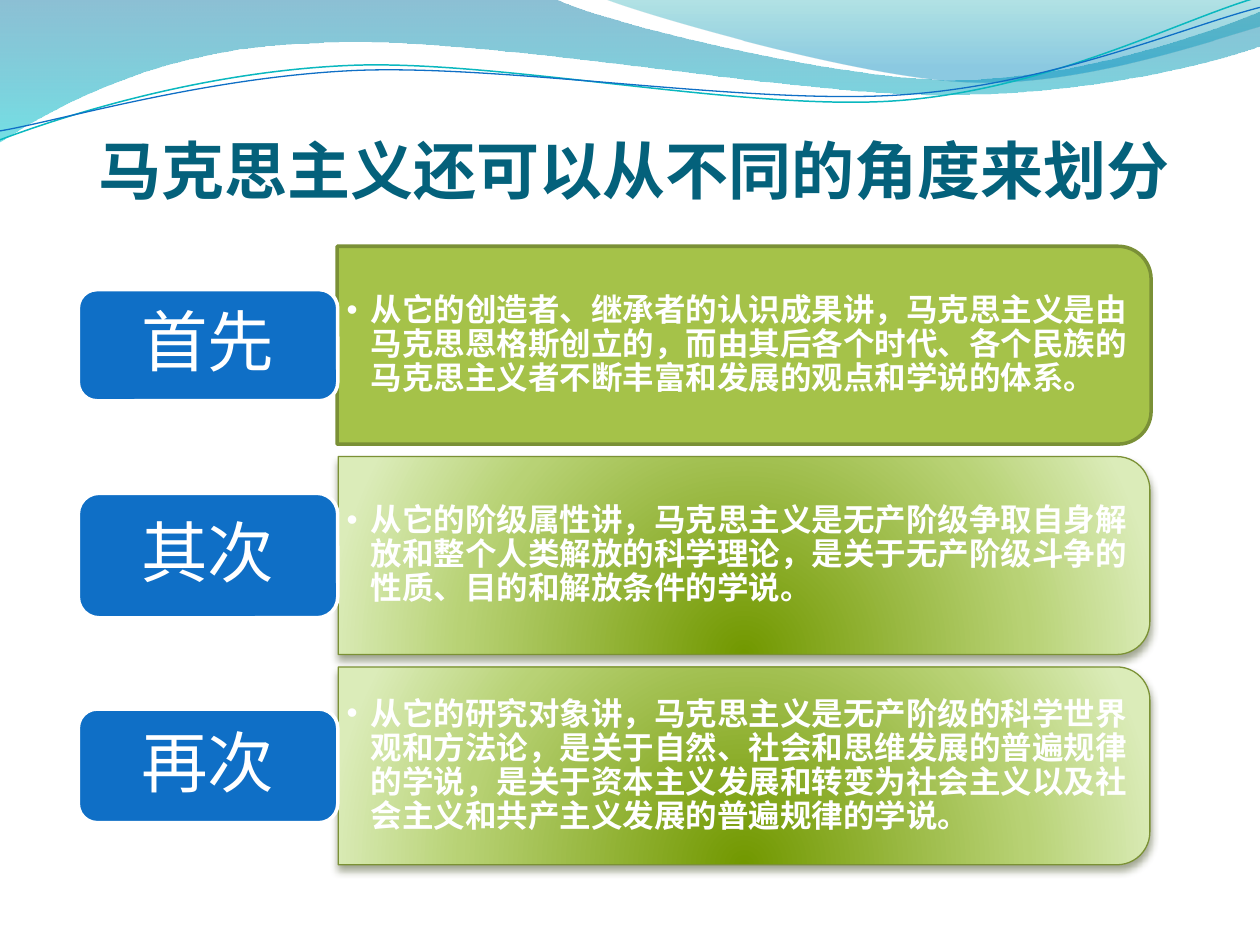
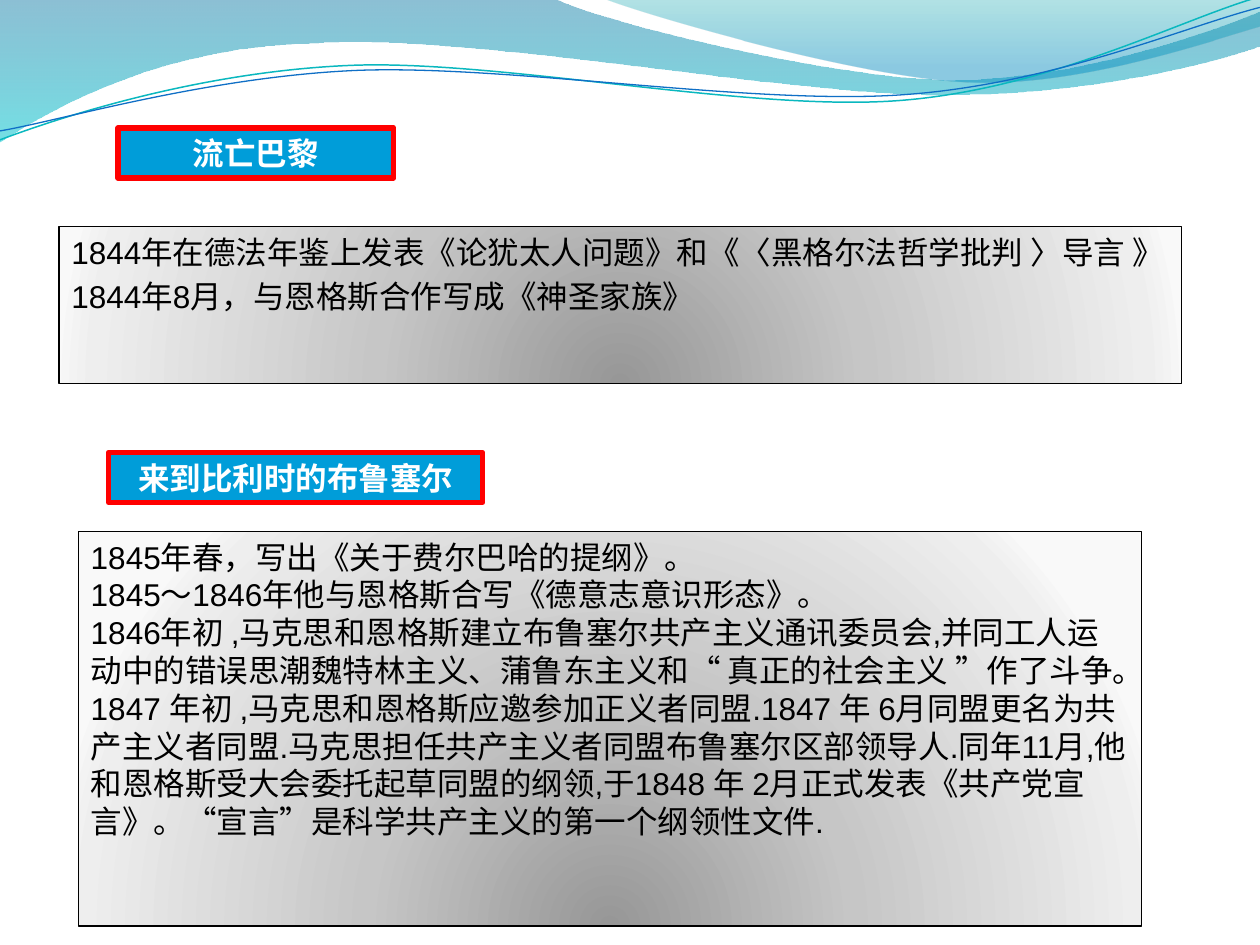
from lxml import etree
from pptx import Presentation
from pptx.dml.color import RGBColor
from pptx.enum.shapes import MSO_SHAPE as Preset
from pptx.enum.text import MSO_ANCHOR as Anchor, PP_ALIGN as Align
from pptx.oxml import parse_xml
from pptx.oxml.ns import nsdecls, qn
from pptx.util import Cm, Pt

TEAL, BLUE, SKY = "04617B", "0F6FC6", "009DD9"
WHITE, BLACK, RED = "FFFFFF", "000000", "FF0000"
# Gradients: angle (None for a circle rising from below), then (position, colour, opacity)
GREEN_GLOW = (None, [(0, "729800", 100), (68, "B8D275", 100), (100, "DBECB9", 100)])
GREY_GLOW = (None, [(0, "979797", 100), (43, "C6C6C6", 100),
                    (93, "EEEEEE", 100), (100, "F9F9F9", 100)])
DEEP_SEA = (90, [(0, "0074A1", 45), (100, "00C6CF", 55)])
LIGHT_SEA = (90, [(0, "00A1A9", 30), (80, "008BBF", 45)])


def paint(shape, fill=None, line=None, width=0.75, shadow=None):
    """Fill with a hex colour, a gradient or nothing; outline; optional shadow colour."""
    props = shape._element.spPr
    shape.shadow.inherit = False
    if fill is None:
        shape.fill.background()
    else:
        shape.fill.solid()
        if isinstance(fill, str):
            shape.fill.fore_color.rgb = RGBColor.from_string(fill)
        else:
            angle, stops = fill
            marks = "".join(
                f'<a:gs pos="{pos * 1000}"><a:srgbClr val="{color}">'
                f'<a:alpha val="{alpha * 1000}"/></a:srgbClr></a:gs>'
                for pos, color, alpha in stops)
            course = (f'<a:lin ang="{angle * 60000}" scaled="1"/>' if angle else
                      '<a:path path="circle"><a:fillToRect l="50000" t="130000" '
                      'r="50000" b="-30000"/></a:path>')
            gradient = parse_xml(f'<a:gradFill {nsdecls("a")} rotWithShape="1">'
                                 f'<a:gsLst>{marks}</a:gsLst>{course}</a:gradFill>')
            props.replace(props.find(qn("a:solidFill")), gradient)
    if line:
        shape.line.color.rgb = RGBColor.from_string(line)
        shape.line.width = Pt(width)
    else:
        shape.line.fill.background()
    if shadow:
        props.find(qn("a:effectLst")).append(parse_xml(
            f'<a:outerShdw {nsdecls("a")} blurRad="{Pt(4.5)}" dist="{Pt(3)}" '
            f'dir="5400000" rotWithShape="0"><a:srgbClr val="{shadow}">'
            '<a:alpha val="48000"/></a:srgbClr></a:outerShdw>'))


def write(shape, *paragraphs, font="Arial", size=18, color=BLACK, bold=False,
          align=Align.LEFT, anchor=Anchor.MIDDLE, inset=(0.25, 0.12, 0.25, 0.12),
          spacing=None, before=0, hang=0, bullet=None):
    """Write paragraphs in one format; a newline is a line break."""
    frame = shape.text_frame
    frame.word_wrap = True
    frame.vertical_anchor = anchor
    (frame.margin_left, frame.margin_top,
     frame.margin_right, frame.margin_bottom) = map(Cm, inset)
    for i, text in enumerate(paragraphs):
        para = frame.add_paragraph() if i else frame.paragraphs[0]
        para.text = text
        para.alignment = align
        para.space_before = Pt(before)
        if spacing:
            para.line_spacing = spacing
        props = para._p.get_or_add_pPr()
        if hang:
            props.set("marL", str(Cm(hang)))
            props.set("indent", str(-Cm(hang)))
        if bullet:
            etree.SubElement(props, qn("a:buFont")).set("typeface", "Arial")
            etree.SubElement(props, qn("a:buChar")).set("char", bullet)
        for run in para.runs:
            run.font.name, run.font.size, run.font.bold = font, Pt(size), bold
            run.font.color.rgb = RGBColor.from_string(color)


prs = Presentation()
prs.slide_width, prs.slide_height = Cm(25.4), Cm(19.05)
blank = prs.slide_layouts[6]
angles_slide, exile_slide = [prs.slides.add_slide(blank) for _ in range(2)]

# Waves across the top of both slides: a pair is a straight step, six numbers a Bézier curve
waves = [
    ([(0, 0), (11.18, -0.03), (12.09, 0.43, 16.87, 1.6, 19.25, 1.6),
      (21.67, 1.6, 24.33, 0.66, 25.4, 0.23), (25.43, 0.91),
      (24.97, 1.12, 22.1, 1.93, 18.95, 1.91), (15.8, 1.91, 9.7, 0.71, 6.53, 0.86),
      (3.28, 0.91, 1.17, 2.11, -0.03, 2.87), (0, 0)], dict(fill=DEEP_SEA)),
    ([(12.17, -0.03), (12.93, 0.28, 17.32, 1.57, 19.53, 1.65),
      (21.74, 1.75, 24.41, 0.81, 25.4, 0.53), (25.4, 0), (12.17, -0.03)],
     dict(fill=LIGHT_SEA)),
    ([(0, 2.82), (1.22, 2.36, 4.01, 1.45, 7.04, 1.32),
      (10.03, 1.19, 15.06, 2.26, 18.11, 2.03),
      (21.16, 1.8, 23.83, 0.38, 25.35, -0.05)], dict(line="0AB8BF", width=0.85)),
    ([(0, 2.64), (1.19, 2.44, 4.17, 1.55, 7.19, 1.42),
      (10.24, 1.3, 15.16, 2.13, 18.21, 1.91),
      (21.23, 1.7, 23.9, 0.53, 25.4, 0.15)], dict(line=BLUE)),
]
for slide in (angles_slide, exile_slide):
    for (start, *steps), look in waves:
        builder = slide.shapes.build_freeform(*map(Cm, start))
        builder.add_line_segments([tuple(map(Cm, step[-2:])) for step in steps],
                                  close="fill" in look)
        wave = builder.convert_to_shape()
        # Bend the straight segments that have control points
        segments = list(wave._element.iter(qn("a:lnTo")))
        for segment, step in zip(segments, steps):
            if len(step) == 6:
                curve = etree.Element(qn("a:cubicBezTo"))
                for x, y in zip(step[::2], step[1::2]):
                    point = etree.SubElement(curve, qn("a:pt"))
                    point.set("x", str(Cm(x) - wave.left))
                    point.set("y", str(Cm(y) - wave.top))
                segment.getparent().replace(segment, curve)
        paint(wave, **look)

# Slide 1: title
title = angles_slide.shapes.add_textbox(Cm(1.98), Cm(1.57), Cm(22.86), Cm(2.6))
write(title, "马克思主义还可以从不同的角度来划分", font="Calibri", size=36, color=TEAL,
      bold=True, anchor=Anchor.BOTTOM, inset=(0, 0.13, 0, 0))

# Slide 1: three angles, each a label and a panel turned to round its right side
flat = dict(fill="A5C249", line="7A9036", width=2)
glowing = dict(fill=GREEN_GLOW, line="7B9135", shadow="3A4519")
angles = [
    ("首先", 2.24, "从它的创造者、继承者的认识成果讲，马克思主义是由马克思恩格斯创立的，"
     "而由其后各个时代、各个民族的马克思主义者不断丰富和发展的观点和学说的体系。",
     16.41, flat),
    ("其次", 2.51, "从它的阶级属性讲，马克思主义是无产阶级争取自身解放和整个人类解放的科学理论，"
     "是关于无产阶级斗争的性质、目的和解放条件的学说。", 16.36, glowing),
    ("再次", 2.29, "从它的研究对象讲，马克思主义是无产阶级的科学世界观和方法论，"
     "是关于自然、社会和思维发展的普遍规律的学说，"
     "是关于资本主义发展和转变为社会主义以及社会主义和共产主义发展的普遍规律的学说。",
     16.36, glowing),
]
PANEL_DEPTH, PANEL_CENTER = 3.99, 15
for row, (order, label_height, view, length, look) in enumerate(angles):
    middle = 6.96 + row * 4.24
    panel = angles_slide.shapes.add_shape(
        Preset.ROUND_2_SAME_RECTANGLE, Cm(PANEL_CENTER - PANEL_DEPTH / 2),
        Cm(middle - length / 2), Cm(PANEL_DEPTH), Cm(length))
    panel.rotation = 90
    paint(panel, **look)
    view_box = angles_slide.shapes.add_textbox(Cm(6.81), Cm(middle - 1.8), Cm(16.2), Cm(3.6))
    write(view_box, view, font="Vollkorn", color=WHITE, bold=True, spacing=0.9,
          inset=(0.18, 0.1, 0.18, 0.1), hang=0.48, bullet="•")
    label = angles_slide.shapes.add_shape(
        Preset.ROUNDED_RECTANGLE, Cm(1.58), Cm(middle - label_height / 2),
        Cm(5.23), Cm(label_height))
    paint(label, BLUE, WHITE, 2)
    write(label, order, font="Vollkorn", size=38, color=WHITE, align=Align.CENTER, spacing=0.9)

# Slide 2: events in each place
paris = ["1844年在德法年鉴上发表《论犹太人问题》和《〈黑格尔法哲学批判 〉导言 》",
         "1844年8月，与恩格斯合作写成《神圣家族》"]
brussels = [
    "1845年春，写出《关于费尔巴哈的提纲》。",
    "1845～1846年他与恩格斯合写《德意志意识形态》。\n"
    "1846年初 ,马克思和恩格斯建立布鲁塞尔共产主义通讯委员会,并同工人运动中的错误思潮"
    "魏特林主义、蒲鲁东主义和“ 真正的社会主义 ”作了斗争。",
    "1847 年初 ,马克思和恩格斯应邀参加正义者同盟.1847 年 6月同盟更名为共产主义者同盟."
    "马克思担任共产主义者同盟布鲁塞尔区部领导人.同年11月,他和恩格斯受大会委托起草同盟的纲领,"
    "于1848 年 2月正式发表《共产党宣言》。“宣言”是科学共产主义的第一个纲领性文件."]
for events, area, layout in [
        (paris, (1.19, 4.57, 22.63, 3.17), dict(hang=0.76, before=4)),
        (brussels, (1.58, 10.72, 21.43, 7.95), {})]:
    record = exile_slide.shapes.add_shape(Preset.RECTANGLE, *map(Cm, area))
    paint(record, GREY_GLOW, BLACK)
    write(record, *events, anchor=Anchor.TOP, **layout)

# Slide 2: place headings
for place, left, top, width in [("流亡巴黎", 2.38, 2.58, 5.56),
                                ("来到比利时的布鲁塞尔", 2.19, 9.12, 7.54)]:
    heading = exile_slide.shapes.add_shape(
        Preset.RECTANGLE, Cm(left), Cm(top), Cm(width), Cm(1.01))
    paint(heading, SKY, RED, 3)
    write(heading, place, color=WHITE, bold=True, align=Align.CENTER)

prs.save("out.pptx")
